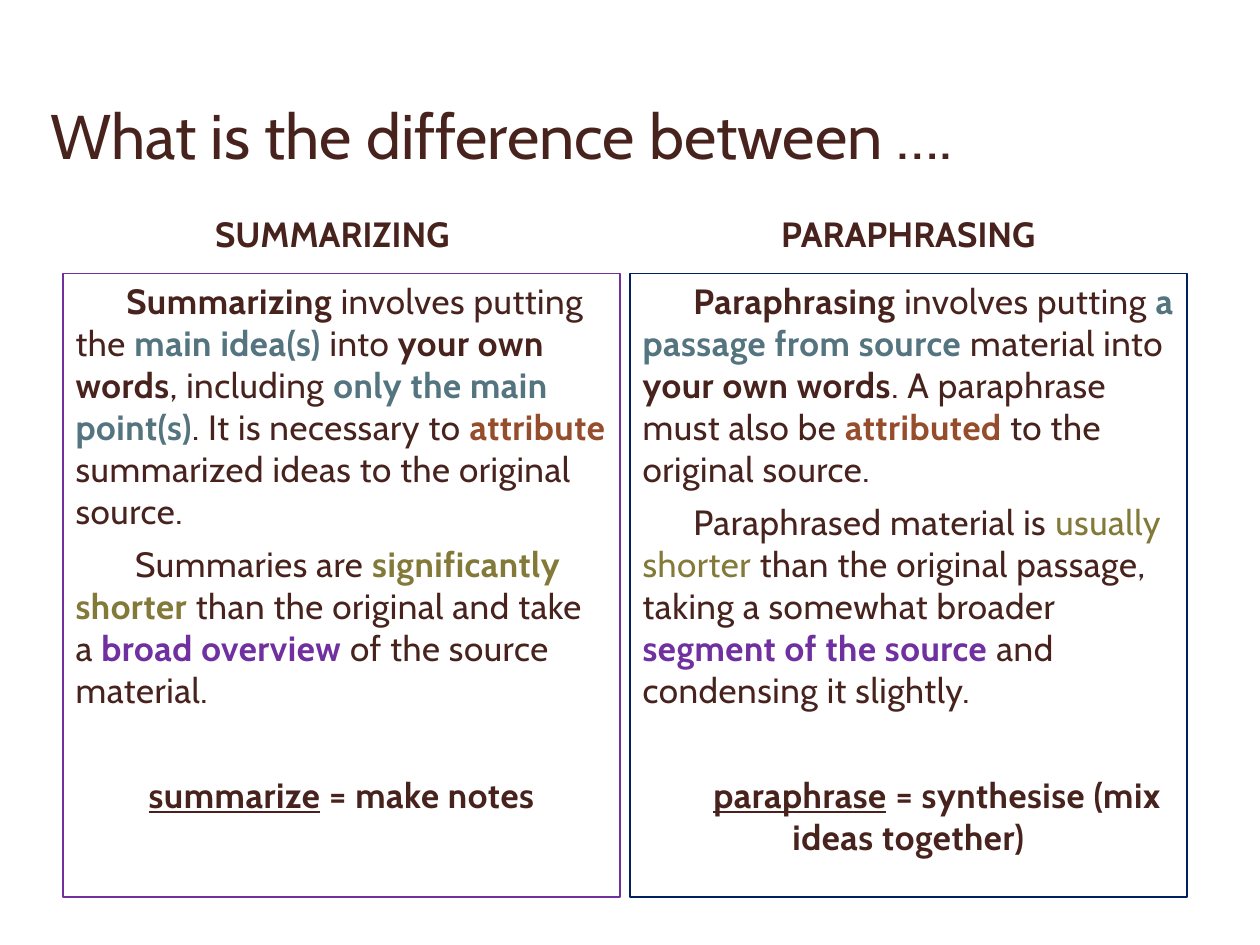
import pptx
import pptx.util
import pptx.dml.color
import pptx.enum.text
import pptx.oxml
import pptx.oxml.ns

Pt = pptx.util.Pt
ALIGN = pptx.enum.text.PP_ALIGN
ANCHOR = pptx.enum.text.MSO_ANCHOR

COLORS = {
    "text": "48231E", "idea": "547480", "source": "964D2C",
    "length": "837938", "scope": "7030A0", "navy": "002060",
}


def rgb(name):
    return pptx.dml.color.RGBColor.from_string(COLORS[name])


class SlideBuilder:
    font = "Cabin"

    def __init__(self, s):
        self.s = s

    def placeholder(self, idx, box, anchor):
        sp = self.s.placeholders[idx]
        for name, value in zip(("left", "top", "width", "height"), box):
            setattr(sp, name, Pt(value))
        tf = sp.text_frame
        frame_format = {"word_wrap": True, "vertical_anchor": anchor,
                        "auto_size": pptx.enum.text.MSO_AUTO_SIZE.NONE}
        for name, value in frame_format.items():
            setattr(tf, name, value)
        return sp

    def paragraph(self, p, runs, size, align=ALIGN.LEFT, before=6, indent=0, spacing=0):
        p.alignment = align
        p.space_before = Pt(before)
        pPr = p._p.get_or_add_pPr()
        pPr.set("marL", "0")
        pPr.set("indent", str(Pt(indent)))
        pPr.append(pptx.oxml.parse_xml(
            "<a:buNone %s/>" % pptx.oxml.ns.nsdecls("a")))
        for text, color, *marks in runs:
            r = p.add_run()
            r.text = text
            run_format = {"name": self.font, "size": Pt(size),
                          "bold": "b" in marks, "underline": "u" in marks}
            for name, value in run_format.items():
                setattr(r.font, name, value)
            r.font.color.rgb = rgb(color)
            if spacing:
                r._r.get_or_add_rPr().set("spc", str(round(spacing * 100)))

    def title(self, text, box):
        sp = self.placeholder(0, box, ANCHOR.BOTTOM)
        self.paragraph(sp.text_frame.paragraphs[0], [(text, "text")], 36, before=4)

    def heading(self, idx, text, box, right_inset):
        sp = self.placeholder(idx, box, ANCHOR.MIDDLE)
        sp.text_frame.margin_right = Pt(right_inset)
        self.paragraph(sp.text_frame.paragraphs[0], [(text, "text", "b")], 20,
                       ALIGN.CENTER)

    def panel(self, idx, paragraphs, box, border):
        sp = self.placeholder(idx, box, ANCHOR.TOP)
        sp.line.color.rgb = rgb(border)
        sp.line.width = Pt(0.75)
        tf = sp.text_frame
        for i, (runs, layout) in enumerate(paragraphs):
            p = tf.add_paragraph() if i else tf.paragraphs[0]
            self.paragraph(p, runs, 20, spacing=0.3, **layout)


# Wording of the two columns
SUMMARIZING = [
    ([("Summarizing", "text", "b"), (" involves putting the ", "text"),
      ("main idea(s) ", "idea", "b"), ("into ", "text"),
      ("your own words", "text", "b"), (", including ", "text"),
      ("only the main point(s)", "idea", "b"),
      (". It is necessary to ", "text"), ("attribute", "source", "b"),
      (" summarized ideas to the original source.", "text")],
     {"indent": 29}),
    ([("Summaries are ", "text"), ("significantly shorter ", "length", "b"),
      ("than the original and take a ", "text"),
      ("broad overview ", "scope", "b"), ("of the source material.", "text")],
     {"indent": 34}),
    ([("summarize", "text", "b", "u"), (" = make notes", "text", "b")],
     {"align": ALIGN.CENTER, "before": 36}),
]
PARAPHRASING = [
    ([("Paraphrasing", "text", "b"), (" involves putting ", "text"),
      ("a passage from source ", "idea", "b"), ("material into ", "text"),
      ("your own words", "text", "b"),
      (". A paraphrase must also be ", "text"), ("attributed", "source", "b"),
      (" to the original source.", "text")],
     {"indent": 29}),
    ([("Paraphrased material is ", "text"), ("usually shorter", "length"),
      (" than the original passage, taking a somewhat broader ", "text"),
      ("segment of the source ", "scope", "b"),
      ("and condensing it slightly.", "text")],
     {"indent": 29}),
    ([("paraphrase", "text", "b", "u"),
      (" = synthesise (mix ideas together)", "text", "b")],
     {"align": ALIGN.CENTER, "before": 36, "indent": 33}),
]


def main():
    prs = pptx.Presentation()
    prs.slide_width, prs.slide_height = Pt(720), Pt(540)
    comparison = prs.slide_layouts[4]
    slide = SlideBuilder(prs.slides.add_slide(comparison))

    # Title
    slide.title("What is the difference between ….", (21.6, 18, 676.8, 84.24))

    # Two columns, each a heading above a bordered panel
    columns = [
        ("SUMMARIZING", SUMMARIZING, "scope", 17.5),
        ("PARAPHRASING", PARAPHRASING, "navy", 7.2),
    ]
    width = 318.24
    for i, (name, paragraphs, border, right_inset) in enumerate(columns):
        left = 36 + i * 324
        slide.heading(1 + 2 * i, name, (left, 113.76, width, 39.6), right_inset)
        slide.panel(2 + 2 * i, paragraphs, (left, 156.24, width, 356.4), border)

    prs.save("out.pptx")


if __name__ == "__main__":
    main()
